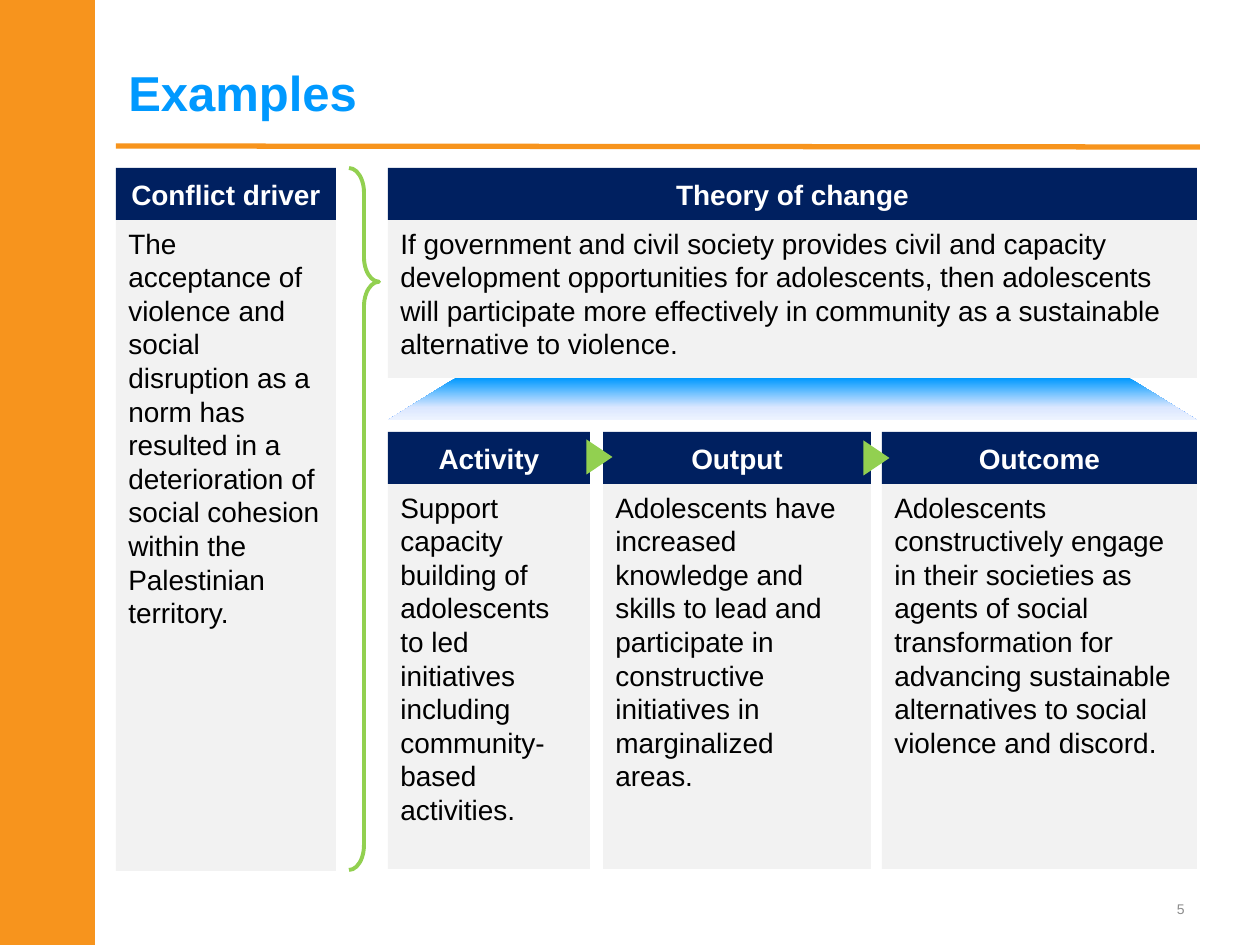
from lxml.etree import SubElement
from pptx import Presentation
from pptx.dml.color import RGBColor
from pptx.enum.shapes import MSO_CONNECTOR, MSO_SHAPE
from pptx.enum.text import MSO_ANCHOR, PP_ALIGN
from pptx.oxml.ns import qn
from pptx.util import Pt

EMU_PER_PX = 914400 / 126
FONT = "Arial"
COLORS = {
    "orange": "F7941D", "blue": "0099FF", "navy": "002060", "panel": "F2F2F2",
    "green": "92D050", "white": "FFFFFF", "black": "000000", "gray": "8C8C8C",
    "pale": "DBE7FF", "mist": "EDF3FF",
}


def px(length):
    return round(length * EMU_PER_PX)


def color(name):
    return RGBColor.from_string(COLORS[name])


def write(shape, text, size=16, tint="black", bold=False,
          align=PP_ALIGN.LEFT, anchor=MSO_ANCHOR.TOP):
    frame = shape.text_frame
    frame.word_wrap = True
    frame.vertical_anchor = anchor
    para = frame.paragraphs[0]
    para.alignment = align
    span = para.add_run()
    span.text = text
    span.font.name = FONT
    span.font.size = Pt(size)
    span.font.bold = bold
    span.font.color.rgb = color(tint)


def add_text(page, box, text, **style):
    shape = page.shapes.add_textbox(*map(px, box))
    write(shape, text, anchor=MSO_ANCHOR.MIDDLE, **style)


def add_block(page, box, fill=None, kind=MSO_SHAPE.RECTANGLE):
    shape = page.shapes.add_shape(kind, *map(px, box))
    shape.shadow.inherit = False
    shape.line.fill.background()
    if fill:
        shape.fill.solid()
        shape.fill.fore_color.rgb = color(fill)
    else:
        shape.fill.background()
    return shape


def add_frame(page, box):
    left, top, width, height = box
    add_block(page, (left, top, 95, height), "orange")
    rule = page.shapes.add_connector(
        MSO_CONNECTOR.STRAIGHT, px(left + 116), px(top + 146), px(left + 1200), px(top + 147))
    rule.line.color.rgb = color("orange")
    rule.line.width = Pt(3)
    SubElement(rule._element.spPr, qn("a:effectLst"))
    add_text(page, (left + 116, top + 38, 1081, 108), "Examples",
             size=28, tint="blue", bold=True)
    add_text(page, (left + 903, top + 892, 294, 34), "5",
             size=8, tint="gray", align=PP_ALIGN.RIGHT)


def add_card(page, box, heading, body):
    left, top, width, height = box
    head = 52
    header = add_block(page, (left, top, width, head), "navy")
    write(header, heading, tint="white", bold=True,
          align=PP_ALIGN.CENTER, anchor=MSO_ANCHOR.MIDDLE)
    panel = add_block(page, (left, top + head, width, height - head), "panel")
    write(panel, body)


def add_brace(page, box):
    brace = add_block(page, box, kind=MSO_SHAPE.RIGHT_BRACE)
    brace.adjustments[0] = 0.825
    brace.adjustments[1] = 0.162
    brace.line.color.rgb = color("green")
    brace.line.width = Pt(2.25)


def add_funnel(page, box):
    funnel = add_block(page, box, kind=MSO_SHAPE.TRAPEZOID)
    funnel.adjustments[0] = 1.611
    funnel.fill.gradient()
    funnel.fill.gradient_angle = 270
    stops = funnel._element.spPr.find(qn("a:gradFill")).find(qn("a:gsLst"))
    for stop in list(stops):
        stops.remove(stop)
    for percent, name in ((0, "blue"), (70, "pale"), (100, "mist")):
        stop = SubElement(stops, qn("a:gs"), pos=str(percent * 1000))
        SubElement(stop, qn("a:srgbClr"), val=COLORS[name])


def add_results(page, box, cards):
    left, top, width, height = box
    for offset, card_width, heading, body in cards:
        add_card(page, (left + offset, top, card_width, height), heading, body)
    for offset, drop in ((194, 12), (471, 13)):
        arrow = add_block(page, (left + offset, top + drop, 35, 26), "green",
                          MSO_SHAPE.ISOSCELES_TRIANGLE)
        arrow.rotation = 90


def main():
    deck = Presentation()
    deck.slide_width, deck.slide_height = px(1260), px(945)
    page = deck.slides.add_slide(deck.slide_layouts[6])
    add_frame(page, (0, 0, 1260, 945))
    add_card(page, (116, 168, 220, 703), "Conflict driver",
             "The acceptance of violence and social disruption as a norm has resulted in "
             "a deterioration of social cohesion within the Palestinian territory.")
    add_brace(page, (349, 168, 30, 702))
    add_card(page, (388, 168, 809, 210), "Theory of change",
             "If government and civil society provides civil and capacity development "
             "opportunities for adolescents, then adolescents will participate more "
             "effectively in community as a sustainable alternative to violence.")
    add_funnel(page, (388, 378, 809, 42))
    add_results(page, (388, 432, 809, 437), (
        (0, 202, "Activity",
         "Support capacity building of adolescents to led initiatives including "
         "community-based activities."),
        (215, 268, "Output",
         "Adolescents have increased knowledge and skills to lead and participate in "
         "constructive initiatives in marginalized areas."),
        (494, 315, "Outcome",
         "Adolescents constructively engage in their societies as agents of social "
         "transformation for advancing sustainable alternatives to social violence "
         "and discord."),
    ))
    deck.save("out.pptx")


if __name__ == "__main__":
    main()
